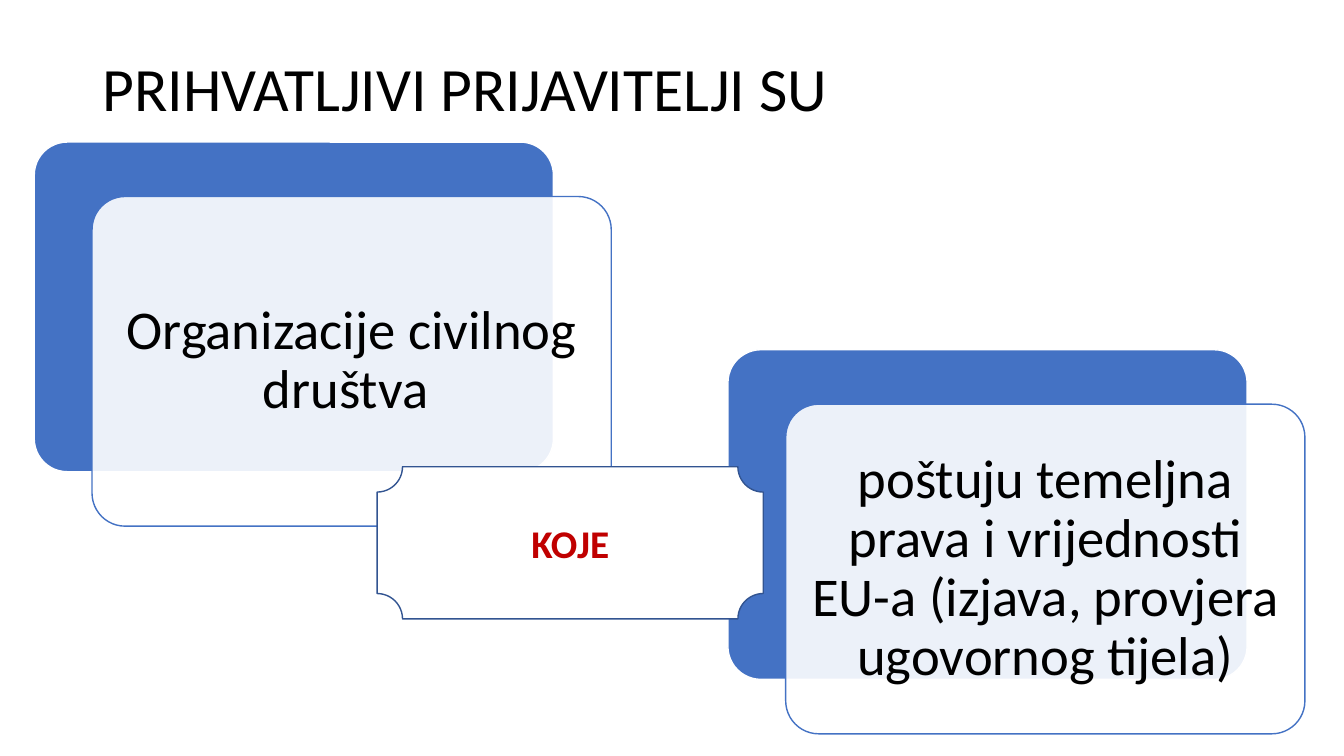
import pptx
import pptx.dml.color
import pptx.enum.shapes
import pptx.enum.text
import pptx.oxml.ns
import pptx.util
from lxml import etree

COLORS = {
    "blue": "4472C4",
    "dark blue": "325491",
    "white": "FFFFFF",
    "black": "000000",
    "red": "C00000",
}
SLIDE_WIDTH = pptx.util.Inches(13.33)
SLIDE_HEIGHT = pptx.util.Inches(7.5)
CARD_SIZE = (38.63, 43.6)
CARD_OFFSET = (4.3, 7.2)
TEXT_MARGIN = (0.71, 1.27)
CARDS = [
    (2.55, 18.8, "Organizacije civilnog društva "),
    (54.16, 46.27, "poštuju temeljna prava i vrijednosti EU-a (izjava, provjera ugovornog tijela)"),
]
SHAPES = pptx.enum.shapes.MSO_SHAPE
ALIGN = pptx.enum.text.PP_ALIGN


def color(name):
    return pptx.dml.color.RGBColor.from_string(COLORS[name])


def place(left, top, width, height):
    """Turn percentages of the slide into lengths."""
    return [
        round(SLIDE_WIDTH * left / 100),
        round(SLIDE_HEIGHT * top / 100),
        round(SLIDE_WIDTH * width / 100),
        round(SLIDE_HEIGHT * height / 100),
    ]


def write_text(shape, text, size, color_name="black", bold=False,
               alignment=ALIGN.CENTER, line_spacing=0.9):
    frame = shape.text_frame
    frame.word_wrap = True
    frame.vertical_anchor = pptx.enum.text.MSO_ANCHOR.MIDDLE
    paragraph = frame.paragraphs[0]
    paragraph.alignment = alignment
    paragraph.line_spacing = line_spacing
    run = paragraph.add_run()
    run.text = text
    run.font.name = "Calibri"
    run.font.size = pptx.util.Pt(size)
    run.font.bold = bold
    run.font.color.rgb = color(color_name)


def add_panel(slide, kind, box, fill, line, opacity=100):
    shape = slide.shapes.add_shape(kind, *place(*box))
    shape.shadow.inherit = False
    shape.fill.solid()
    shape.fill.fore_color.rgb = color(fill)
    shape.line.color.rgb = color(line)
    shape.line.width = pptx.util.Pt(1)
    if opacity < 100:
        tint = shape.fill._xPr.find(".//" + pptx.oxml.ns.qn("a:srgbClr"))
        alpha = etree.SubElement(tint, pptx.oxml.ns.qn("a:alpha"))
        alpha.set("val", str(opacity * 1000))
    return shape


def add_text(slide, box, text, size, inset=None, **style):
    shape = slide.shapes.add_textbox(*place(*box))
    if inset is not None:
        frame = shape.text_frame
        frame.margin_left = frame.margin_right = pptx.util.Inches(inset)
        frame.margin_top = frame.margin_bottom = pptx.util.Inches(inset)
    write_text(shape, text, size, **style)


def add_card(slide, left, top, text):
    back = add_panel(slide, SHAPES.ROUNDED_RECTANGLE, (left, top, *CARD_SIZE), "blue", "white")
    front_left, front_top = left + CARD_OFFSET[0], top + CARD_OFFSET[1]
    front = add_panel(slide, SHAPES.ROUNDED_RECTANGLE,
                      (front_left, front_top, *CARD_SIZE), "white", "blue", opacity=90)
    for panel in (back, front):
        panel.adjustments[0] = 0.1
    margin_x, margin_y = TEXT_MARGIN
    width, height = CARD_SIZE
    text_box = (front_left + margin_x, front_top + margin_y,
                width - 2 * margin_x, height - 2 * margin_y)
    add_text(slide, text_box, text, 39, inset=0.16)


def main():
    presentation = pptx.Presentation()
    presentation.slide_width = SLIDE_WIDTH
    presentation.slide_height = SLIDE_HEIGHT
    slide = presentation.slides.add_slide(presentation.slide_layouts[6])
    add_text(slide, (6.9, 5.33, 86.27, 13.47), "PRIHVATLJIVI PRIJAVITELJI SU", 44,
             alignment=ALIGN.LEFT)
    for left, top, text in CARDS:
        add_card(slide, left, top, text)
    plaque = add_panel(slide, SHAPES.PLAQUE, (28.06, 61.73, 28.73, 20.13), "white", "dark blue")
    write_text(plaque, "KOJE", 28, color_name="red", bold=True, line_spacing=1.0)
    presentation.save("out.pptx")


if __name__ == "__main__":
    main()
